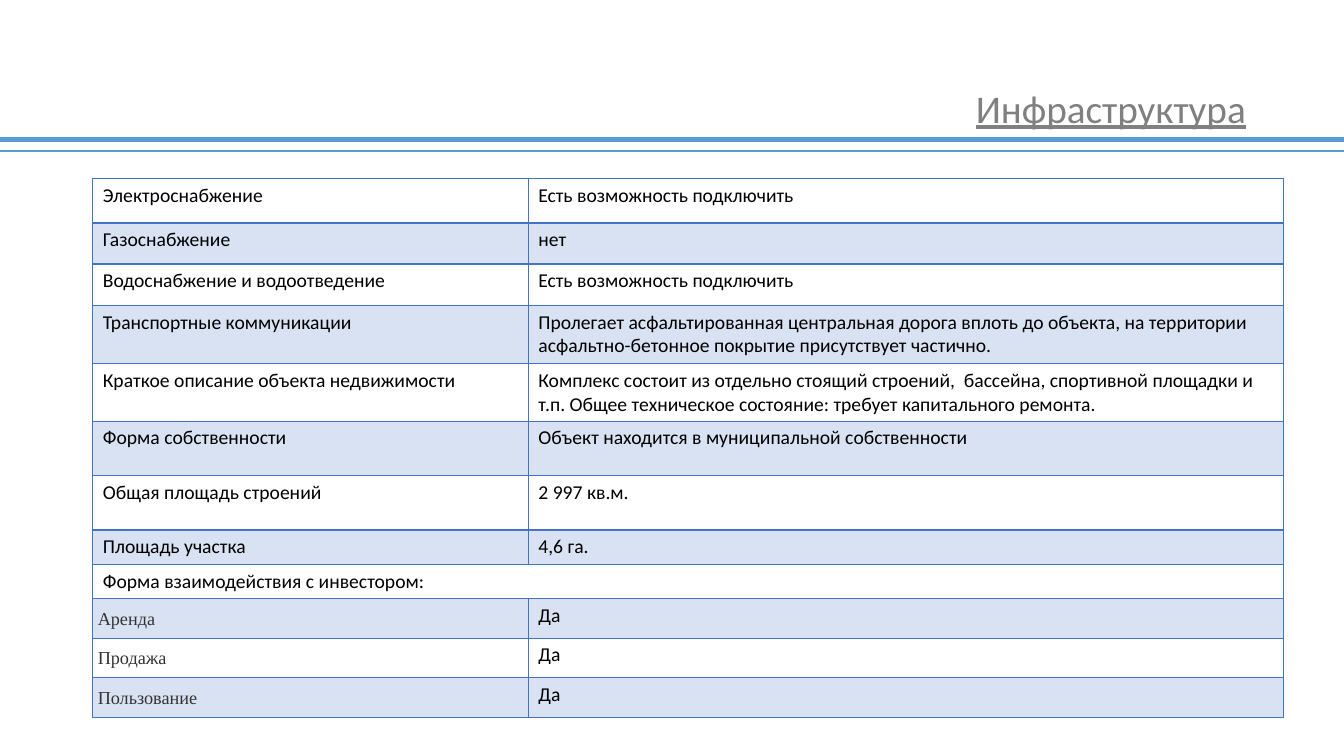
import pptx
import pptx.dml.color
import pptx.enum.shapes
import pptx.enum.text
import pptx.oxml.ns
import pptx.util
import lxml.etree

Inches = pptx.util.Inches
Pt = pptx.util.Pt
RGBColor = pptx.dml.color.RGBColor
qn = pptx.oxml.ns.qn

RULE_BLUE = RGBColor(0x5B, 0x9B, 0xD5)
TABLE_BLUE = RGBColor(0x44, 0x72, 0xC4)
TITLE_GRAY = RGBColor(0x80, 0x80, 0x80)
OPTION_GRAY = RGBColor(0x33, 0x33, 0x33)
BLACK = RGBColor(0, 0, 0)

SLIDE_WIDTH, SLIDE_HEIGHT = 13.33, 7.5
COLUMN_WIDTHS = (4.32, 7.49)
FACTS = [
    (0.44, "Электроснабжение", "Есть возможность подключить"),
    (0.41, "Газоснабжение", "нет"),
    (0.41, "Водоснабжение и водоотведение", "Есть возможность подключить"),
    (0.58, "Транспортные коммуникации",
     "Пролегает асфальтированная центральная дорога вплоть до объекта, на территории "
     "асфальтно-бетонное покрытие присутствует частично."),
    (0.57, "Краткое описание объекта недвижимости",
     "Комплекс состоит из отдельно стоящий строений,  бассейна, спортивной площадки и т.п. "
     "Общее техническое состояние: требует капитального ремонта."),
    (0.54, "Форма собственности", "Объект находится в муниципальной собственности"),
    (0.54, "Общая площадь строений", "2 997 кв.м."),
    (0.34, "Площадь участка", "4,6 га."),
]
INVESTOR_HEADING = (0.34, "Форма взаимодействия с инвестором:", "")
INVESTOR_OPTIONS = [(0.38, option, "Да") for option in ("Аренда", "Продажа", "Пользование")]


def add_text(paragraph, text, size, color, name="Calibri"):
    run = paragraph.add_run()
    run.text = text
    run.font.size = Pt(size)
    run.font.name = name
    run.font.color.rgb = color
    return run


def add_rule(slide, left, top, width, weight):
    rule = slide.shapes.add_connector(
        pptx.enum.shapes.MSO_CONNECTOR.STRAIGHT,
        Inches(left), Inches(top), Inches(left + width), Inches(top))
    rule.line.color.rgb = RULE_BLUE
    rule.line.width = Pt(weight)
    lxml.etree.SubElement(rule._element.spPr, qn("a:effectLst"))


def add_header(slide, left, top, width):
    add_rule(slide, left, top + 1.38, width, 3.5)
    add_rule(slide, left, top + 1.5, width, 1.5)
    title = slide.shapes.add_textbox(
        Inches(left + 9.58), Inches(top + 0.69), Inches(2.98), Inches(0.81))
    frame = title.text_frame
    frame.word_wrap = True
    frame.vertical_anchor = pptx.enum.text.MSO_ANCHOR.MIDDLE
    paragraph = frame.paragraphs[0]
    paragraph.line_spacing = 0.9
    add_text(paragraph, "Инфраструктура", 28, TITLE_GRAY).font.underline = True


def add_solid_color(parent):
    fill = lxml.etree.SubElement(parent, qn("a:solidFill"))
    return lxml.etree.SubElement(fill, qn("a:srgbClr"), val=str(TABLE_BLUE))


def style_cell(cell, shaded, bottom_weight):
    properties = cell._tc.get_or_add_tcPr()
    for side, weight in (("L", 1), ("R", 1), ("T", 1), ("B", bottom_weight)):
        border = lxml.etree.SubElement(properties, qn(f"a:ln{side}"), w=str(Pt(weight)))
        add_solid_color(border)
    if shaded:
        color = add_solid_color(properties)
        lxml.etree.SubElement(color, qn("a:alpha"), val="20000")
    else:
        cell.fill.background()


def add_option(cell, text):
    cell.vertical_anchor = pptx.enum.text.MSO_ANCHOR.MIDDLE
    cell.margin_left = cell.margin_right = Inches(0.05)
    cell.margin_top = cell.margin_bottom = Inches(0.08)
    paragraph = cell.text_frame.paragraphs[0]
    paragraph.line_spacing = 1.07
    paragraph.space_after = Pt(8)
    add_text(paragraph, text, 13, OPTION_GRAY, "Times New Roman")


def add_infrastructure_table(slide, left, top):
    rows = FACTS + [INVESTOR_HEADING] + INVESTOR_OPTIONS
    heading_index = len(FACTS)
    table = slide.shapes.add_table(
        len(rows), 2, Inches(left), Inches(top), Inches(sum(COLUMN_WIDTHS)),
        Inches(sum(row[0] for row in rows))).table
    table.first_row = False
    table.horz_banding = False
    for column, width in zip(table.columns, COLUMN_WIDTHS):
        column.width = Inches(width)
    for row_index, (height, *texts) in enumerate(rows):
        table.rows[row_index].height = Inches(height)
        for column_index, text in enumerate(texts):
            cell = table.cell(row_index, column_index)
            style_cell(cell, row_index % 2 == 1, 2 if row_index == 0 else 1)
            if row_index > heading_index and column_index == 0:
                add_option(cell, text)
            elif text:
                add_text(cell.text_frame.paragraphs[0], text, 14, BLACK)
    table.cell(heading_index, 0).merge(table.cell(heading_index, 1))


def main():
    presentation = pptx.Presentation()
    presentation.slide_width = Inches(SLIDE_WIDTH)
    presentation.slide_height = Inches(SLIDE_HEIGHT)
    slide = presentation.slides.add_slide(presentation.slide_layouts[6])
    add_header(slide, 0, 0, SLIDE_WIDTH)
    add_infrastructure_table(slide, 0.92, 1.77)
    presentation.save("out.pptx")


if __name__ == "__main__":
    main()
